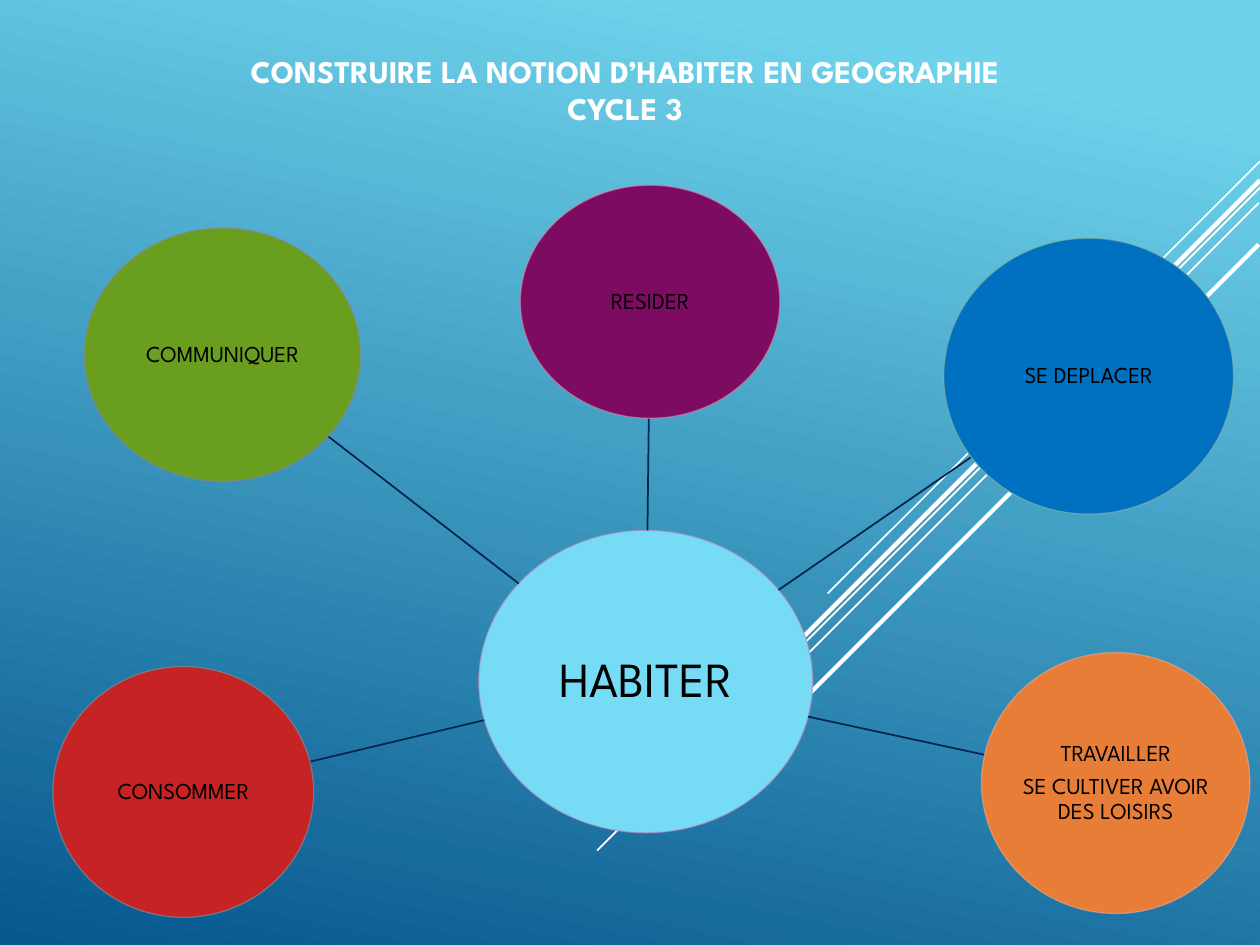
from math import hypot

from lxml import etree
from pptx import Presentation
from pptx import util as u
from pptx.dml.color import RGBColor
from pptx.enum import shapes, text
from pptx.oxml.ns import qn

FONT = "League Spartan"
COLORS = {
    "sky": "6ED2EB", "deep": "06588E", "white": "FFFFFF", "ink": "000000",
    "spoke": "04264E", "hub": "76DBF4", "hub edge": "C089BD",
    "purple": "7C0B61", "purple edge": "D68BA6",
    "blue": "0070C0", "blue edge": "8AB7A1",
    "orange": "E87D37", "orange edge": "EEA78F",
    "red": "C62324", "red edge": "89919C",
    "green": "6A9E1F", "green edge": "898989",
}

# The slide is a grid of 100 columns by 75 rows of square cells
WIDTH, HEIGHT = u.Inches(10), u.Inches(7.5)
CELL = WIDTH / 100

TITLE_BOX = (11.4, 3.6, 76.4, 7.1)
TITLE = ["CONSTRUIRE LA NOTION D’HABITER EN GEOGRAPHIE", "CYCLE 3"]

# Diagonal stripes: right end column and row, columns covered, weight
STRIPES = [(100, 12.8, 34.3, 1), (100.1, 14.8, 52.7, 1), (99.9, 16.1, 42.8, 1),
           (100, 14.3, 42, 2.5), (99.9, 19.4, 37.5, 2.5)]

# Circles: box in cells, colour, paragraphs
HUB = ((38, 42.1, 26.5, 24), "hub", ["HABITER"])
THEMES = [
    ((41.3, 14.7, 20.6, 18.5), "purple", ["RESIDER"]),
    ((74.9, 18.9, 23, 21.9), "blue", ["SE DEPLACER"]),
    ((77.9, 51.8, 21.3, 20.7), "orange",
     ["TRAVAILLER", "SE CULTIVER AVOIR DES LOISIRS"]),
    ((4.2, 52.9, 20.7, 19.9), "red", ["CONSOMMER"]),
    ((6.7, 18.1, 21.9, 20.1), "green", ["COMMUNIQUER"]),
]


def color(name):
    return RGBColor.from_string(COLORS[name])


def cells(*values):
    return [u.Emu(round(value * CELL)) for value in values]


def write(frame, lines, size, color_name, bold=False):
    frame.word_wrap = True
    frame.text = "\n".join(lines)
    for paragraph in frame.paragraphs:
        paragraph.alignment = text.PP_ALIGN.CENTER
        paragraph.font.name = FONT
        paragraph.font.size = u.Pt(size)
        paragraph.font.bold = bold
        paragraph.font.color.rgb = color(color_name)


def add_line(slide, start, end, color_name, weight):
    line = slide.shapes.add_connector(
        shapes.MSO_CONNECTOR.STRAIGHT, *cells(*start, *end))
    line.line.color.rgb = color(color_name)
    line.line.width = u.Pt(weight)
    etree.SubElement(line._element.spPr, qn("a:effectLst"))


def add_background(slide):
    fill = slide.background.fill
    fill.gradient()
    fill.gradient_angle = 258
    for stop, position, name in zip(fill.gradient_stops, (0.1, 1), ("sky", "deep")):
        stop.position = position
        stop.color.rgb = color(name)
    for column, row, span, weight in STRIPES:
        add_line(slide, (column, row), (column - span, row + span), "white", weight)


def add_title(slide, box):
    title = slide.shapes.title
    title.left, title.top, title.width, title.height = cells(*box)
    write(title.text_frame, TITLE, 18, "white", bold=True)
    title.text_frame.vertical_anchor = text.MSO_ANCHOR.TOP
    for paragraph in title.text_frame.paragraphs:
        paragraph.space_before = u.Pt(0)


def add_circle(slide, box, color_name, lines, size):
    circle = slide.shapes.add_shape(shapes.MSO_SHAPE.OVAL, *cells(*box))
    circle.shadow.inherit = False
    circle.fill.solid()
    circle.fill.fore_color.rgb = color(color_name)
    circle.line.width = u.Pt(0.75)
    circle.line.color.rgb = color(color_name + " edge")
    edge = circle.line._ln.find(".//" + qn("a:srgbClr"))
    etree.SubElement(edge, qn("a:alpha"), val="60000")
    frame = circle.text_frame
    write(frame, lines, size, "ink")
    frame.vertical_anchor = text.MSO_ANCHOR.MIDDLE
    frame.margin_left = frame.margin_right = u.Inches(0.01)
    frame.margin_top = frame.margin_bottom = u.Inches(0.01)
    for paragraph in frame.paragraphs:
        paragraph.line_spacing = 0.9
        paragraph.space_after = u.Pt(size * 0.35)


def center(box):
    left, top, width, height = box
    return left + width / 2, top + height / 2


def rim_point(box, target):
    """Point on the ellipse in box that faces the target."""
    x, y = center(box)
    dx, dy = target[0] - x, target[1] - y
    share = 1 / hypot(2 * dx / box[2], 2 * dy / box[3])
    return x + dx * share, y + dy * share


def add_radial_diagram(slide):
    add_circle(slide, *HUB, size=28)
    hub_box = HUB[0]
    for box, color_name, lines in THEMES:
        add_line(slide, rim_point(hub_box, center(box)),
                 rim_point(box, center(hub_box)), "spoke", 1)
        add_circle(slide, box, color_name, lines, size=13)


def main():
    presentation = Presentation()
    presentation.slide_width, presentation.slide_height = WIDTH, HEIGHT
    slide = presentation.slides.add_slide(presentation.slide_layouts[5])
    add_background(slide)
    add_title(slide, TITLE_BOX)
    add_radial_diagram(slide)
    presentation.save("out.pptx")


if __name__ == "__main__":
    main()
